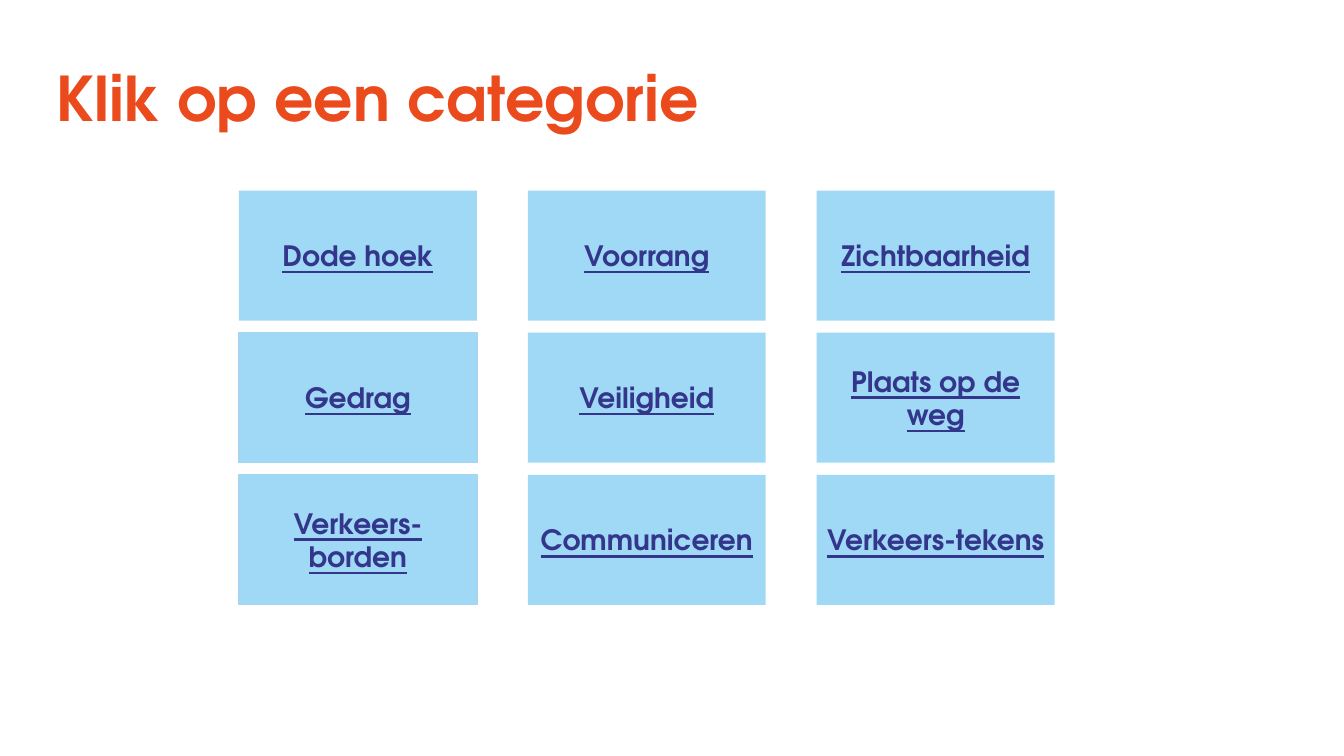
"""Build the slide with a three-by-three grid of quiz categories."""
from dataclasses import dataclass

from pptx import Presentation
from pptx.dml.color import RGBColor
from pptx.enum.shapes import MSO_SHAPE
from pptx.enum.text import MSO_ANCHOR, PP_ALIGN
from pptx.util import Inches, Pt

FONT = "TeX Gyre Adventor"
ORANGE = RGBColor(0xEA, 0x4A, 0x1C)
SKY = RGBColor(0x9F, 0xD9, 0xF6)
EDGE = RGBColor(0xA7, 0xD5, 0xF1)
NAVY = RGBColor(0x33, 0x36, 0x8B)

LEFT, TOP = 2.37, 1.89
STEP_X, STEP_Y = 2.865, 1.41
TILE_W, TILE_H = 2.36, 1.29
COLUMNS = 3


@dataclass(frozen=True)
class Category:
    name: str
    outlined: bool = False


CATEGORIES = [
    Category("Dode hoek"), Category("Voorrang"), Category("Zichtbaarheid"),
    Category("Gedrag", outlined=True), Category("Veiligheid"), Category("Plaats op de weg"),
    Category("Verkeers-borden", outlined=True), Category("Communiceren"), Category("Verkeers-tekens"),
]


def write(shape, text: str, size: float, color: RGBColor):
    tf = shape.text_frame
    tf.word_wrap = True
    tf.vertical_anchor = MSO_ANCHOR.MIDDLE
    p = tf.paragraphs[0]
    p.text = text
    p.font.name, p.font.size, p.font.bold = FONT, Pt(size), True
    p.font.color.rgb = color
    return p


def add_title(s, text: str) -> None:
    box = s.shapes.add_textbox(Inches(0.46), Inches(0.28), Inches(12.41), Inches(1.45))
    write(box, text, 44, ORANGE).line_spacing = 0.9


def add_category(s, category: Category, row: int, column: int) -> None:
    sp = s.shapes.add_shape(
        MSO_SHAPE.RECTANGLE,
        Inches(LEFT + column * STEP_X), Inches(TOP + row * STEP_Y),
        Inches(TILE_W), Inches(TILE_H),
    )
    sp.shadow.inherit = False
    sp.fill.solid()
    sp.fill.fore_color.rgb = SKY
    if category.outlined:
        sp.line.color.rgb = EDGE
        sp.line.width = Pt(1)
    else:
        sp.line.fill.background()
    p = write(sp, category.name, 20, NAVY)
    p.alignment = PP_ALIGN.CENTER
    p.font.underline = True


def main() -> None:
    prs = Presentation()
    prs.slide_width, prs.slide_height = Inches(13.33), Inches(7.5)
    s = prs.slides.add_slide(prs.slide_layouts[6])
    add_title(s, "Klik op een categorie")
    for i, category in enumerate(CATEGORIES):
        add_category(s, category, *divmod(i, COLUMNS))
    prs.save("out.pptx")


if __name__ == "__main__":
    main()
